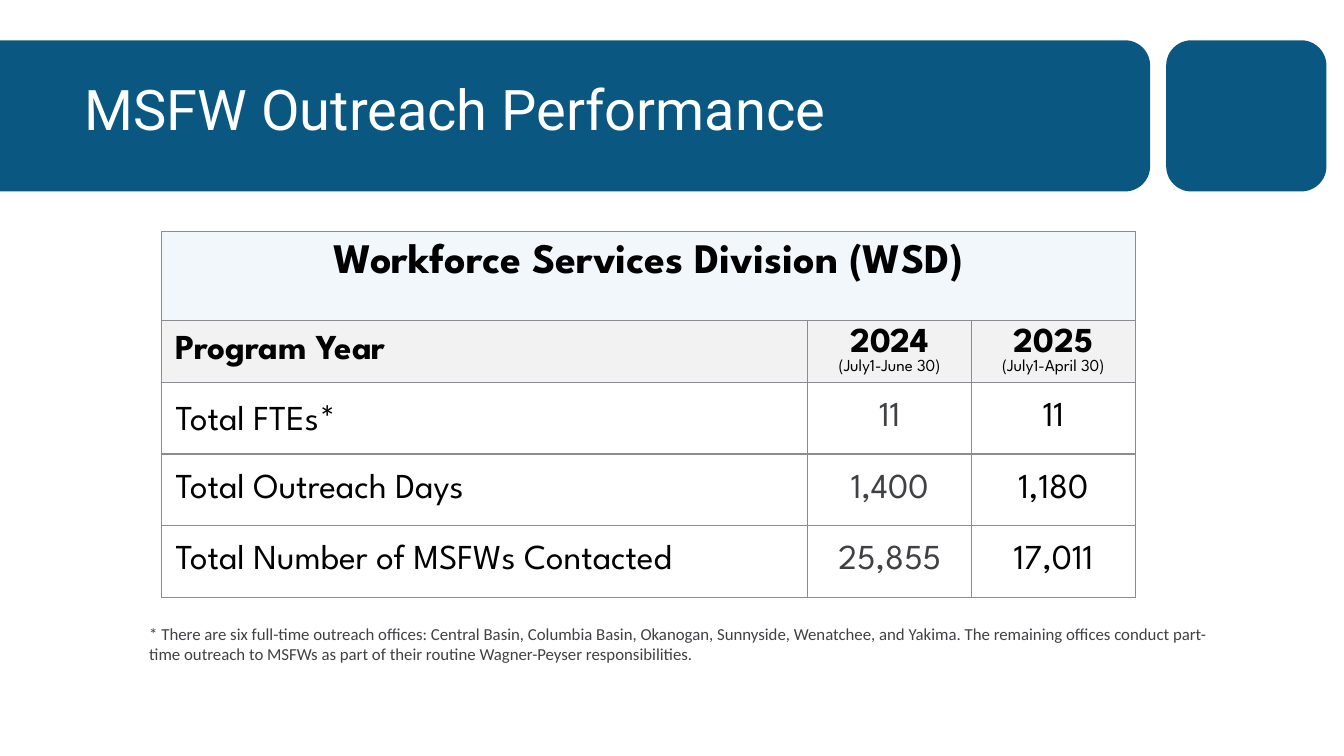
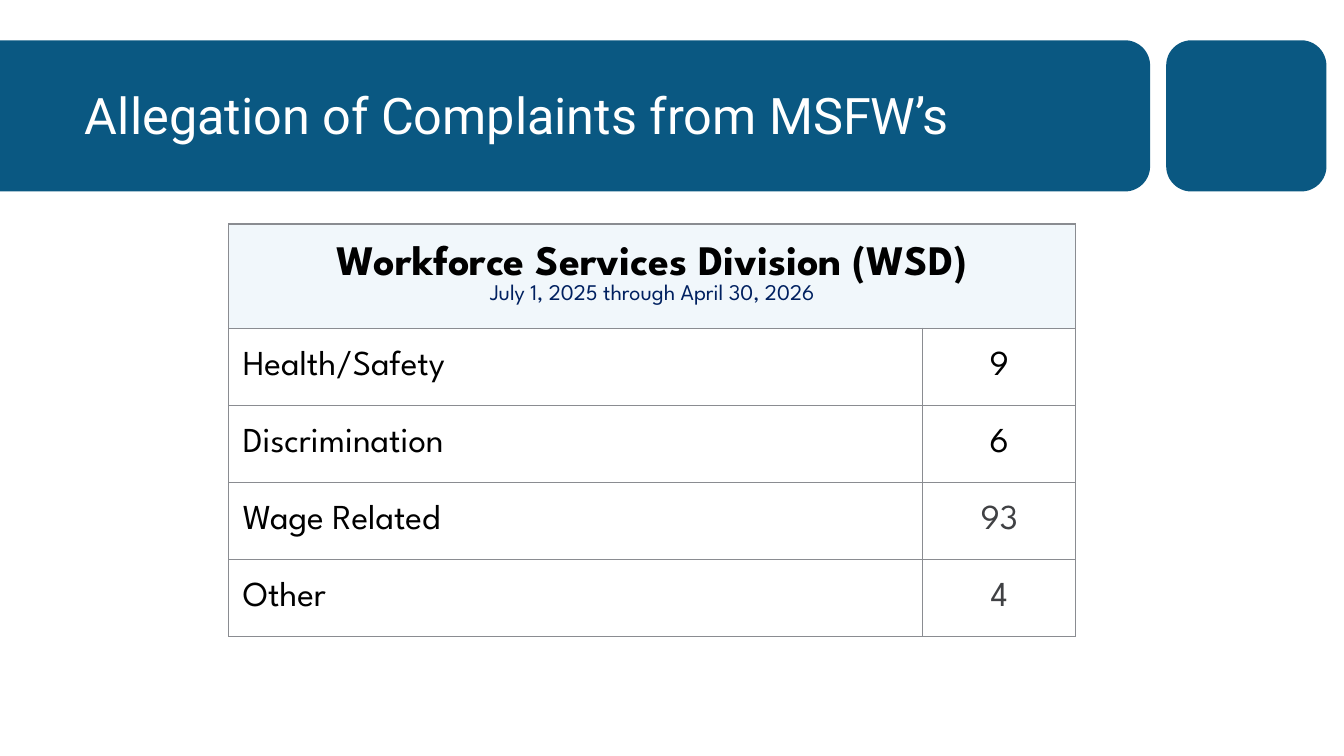
from math import cos, radians, sin

from lxml.etree import SubElement
from pptx import Presentation
from pptx.dml.color import RGBColor
from pptx.enum.shapes import MSO_SHAPE
from pptx.enum.text import MSO_ANCHOR, MSO_AUTO_SIZE, PP_ALIGN
from pptx.oxml.ns import qn
from pptx.util import Pt

# Theme: colours, fonts and type styles as (font, size, colour, bold)
THEME = {
    "band": "0A5882",
    "border": "8A8C91",
    "header_fill": "F1F7FB",
    "year_fill": "F2F2F2",
    "styles": {
        "title": ("Roboto", 40, "FFFFFF", False),
        "long_title": ("Roboto", 36, "FFFFFF", False),
        "heading": ("League Spartan", 30, "000000", True),
        "period": ("League Spartan", 16, "002060", False),
        "year": ("League Spartan", 25, "000000", True),
        "months": ("League Spartan", 12, "000000", False),
        "body": ("League Spartan", 25, "000000", False),
        "muted": ("League Spartan", 25, "404144", False),
        "mark": ("Calibri", 25, "000000", False),
        "note": ("Calibri", 12, "404144", False),
    },
}

# Content: a cell is a list of paragraphs, a paragraph a list of (text, style) runs
DIVISION = [("Workforce Services Division (WSD)", "heading")]


def one(text, style="body"):
    return [[(text, style)]]


SLIDES = [
    {
        "title": ("MSFW Outreach Performance", "title"),
        "title_top": 38,
        "table_at": (115.5, 165.5),
        "columns": (461.5, 117, 117),
        "rows": (63.5, 43.5, 51.2, 51.2, 51.2),
        "heading_bottom": 23,
        "year_row": 1,
        "cells": [
            [[DIVISION]],
            [one("Program Year", "year"),
             [[("2024", "year")], [("(July1-June 30)", "months")]],
             [[("2025", "year")], [("(July1-April 30)", "months")]]],
            [[[("Total FTEs", "body"), ("*", "mark")]], one("11", "muted"), one("11")],
            [one("Total Outreach Days"), one("1,400", "muted"), one("1,180")],
            [one("Total Number of MSFWs Contacted"), one("25,855", "muted"), one("17,011")],
        ],
        "note": "* There are six full-time outreach offices: Central Basin, Columbia Basin, "
                "Okanogan, Sunnyside, Wenatchee, and Yakima. The remaining offices conduct "
                "part-time outreach to MSFWs as part of their routine Wagner-Peyser "
                "responsibilities.",
    },
    {
        "title": ("Allegation of Complaints from MSFW’s", "long_title"),
        "title_top": 42,
        "table_at": (163.5, 160),
        "columns": (495.5, 109.5),
        "rows": (74.5, 55, 55, 55, 55),
        "heading_bottom": 5,
        "cells": [
            [[DIVISION, [("July 1, 2025 through April 30, 2026", "period")]]],
            [one("Health/Safety"), one("9")],
            [one("Discrimination"), one("6")],
            [one("Wage Related"), one("93", "muted")],
            [one("Other"), one("4", "muted")],
        ],
    },
]


def color(name):
    return RGBColor.from_string(name)


def write(tf, paragraphs, align=PP_ALIGN.LEFT, spacing=None):
    for i, runs in enumerate(paragraphs):
        p = tf.paragraphs[0] if i == 0 else tf.add_paragraph()
        p.alignment = align
        if spacing:
            p.line_spacing = spacing
        for text, style in runs:
            r = p.add_run()
            r.text = text
            font, size, ink, bold = THEME["styles"][style]
            r.font.name, r.font.size, r.font.bold = font, Pt(size), bold
            r.font.color.rgb = color(ink)


def place(sp, left, top, width, height):
    sp.left, sp.top, sp.width, sp.height = Pt(left), Pt(top), Pt(width), Pt(height)


def add_bands(s, layout):
    """Draw the title band and its square, then hand them to the layout."""
    top, bottom, right, radius = 28.8, 136.8, 821.5, 18
    corners = [(top + radius, range(-90, 1, 5)), (bottom - radius, range(0, 91, 5))]
    arc = [(Pt(right - radius + radius * cos(radians(a))), Pt(y + radius * sin(radians(a))))
           for y, angles in corners for a in angles]
    outline = s.shapes.build_freeform(0, Pt(top))
    outline.add_line_segments(arc + [(0, Pt(bottom))], close=True)
    band = outline.convert_to_shape()
    square = s.shapes.add_shape(MSO_SHAPE.ROUNDED_RECTANGLE, Pt(833), Pt(top),
                                Pt(114.5), Pt(bottom - top))
    for i, sp in enumerate((band, square)):
        sp.fill.solid()
        sp.fill.fore_color.rgb = color(THEME["band"])
        sp.line.fill.background()
        sp.shadow.inherit = False
        layout.shapes.element.insert(2 + i, sp.element)


def set_borders(cell):
    tcPr = cell._tc.get_or_add_tcPr()
    for side in ("a:lnL", "a:lnR", "a:lnT", "a:lnB"):
        line = SubElement(tcPr, qn(side), w=str(Pt(1)))
        fill = SubElement(line, qn("a:solidFill"))
        SubElement(fill, qn("a:srgbClr"), val=THEME["border"])


def add_table(s, data):
    columns, rows = data["columns"], data["rows"]
    left, top = data["table_at"]
    table = s.shapes.add_table(len(rows), len(columns), Pt(left), Pt(top),
                               Pt(sum(columns)), Pt(sum(rows))).table
    table.first_row = table.horz_banding = False
    for column, width in zip(table.columns, columns):
        column.width = Pt(width)
    for row, height in zip(table.rows, rows):
        row.height = Pt(height)
    table.cell(0, 0).merge(table.cell(0, len(columns) - 1))
    fills = {0: THEME["header_fill"], data.get("year_row"): THEME["year_fill"]}

    for i in range(len(rows)):
        for j in range(len(columns)):
            cell = table.cell(i, j)
            set_borders(cell)
            if i in fills:
                cell.fill.solid()
                cell.fill.fore_color.rgb = color(fills[i])
            else:
                cell.fill.background()
            if cell.is_spanned:
                continue
            cell.vertical_anchor = MSO_ANCHOR.MIDDLE
            cell.margin_left = cell.margin_right = Pt(10)
            cell.margin_top = Pt(5)
            cell.margin_bottom = Pt(data["heading_bottom"] if i == 0 else 5)
            centred = i == 0 or j > 0
            write(cell.text_frame, data["cells"][i][j],
                  align=PP_ALIGN.CENTER if centred else PP_ALIGN.LEFT)


def add_note(s, text):
    tf = s.shapes.add_textbox(Pt(99.5), Pt(442), Pt(777), Pt(36)).text_frame
    tf.word_wrap = True
    write(tf, one(text, "note"))


def main():
    prs = Presentation()
    prs.slide_width, prs.slide_height = Pt(960), Pt(540)
    layout = prs.slide_layouts[5]

    for number, data in enumerate(SLIDES):
        s = prs.slides.add_slide(layout)
        if number == 0:
            add_bands(s, layout)
        title = s.shapes.title
        place(title, 53.5, data["title_top"], 757, 85)
        tf = title.text_frame
        tf.auto_size, tf.vertical_anchor = MSO_AUTO_SIZE.NONE, MSO_ANCHOR.MIDDLE
        write(tf, [[data["title"]]], spacing=0.9)
        add_table(s, data)
        if "note" in data:
            add_note(s, data["note"])

    prs.save("out.pptx")


if __name__ == "__main__":
    main()
